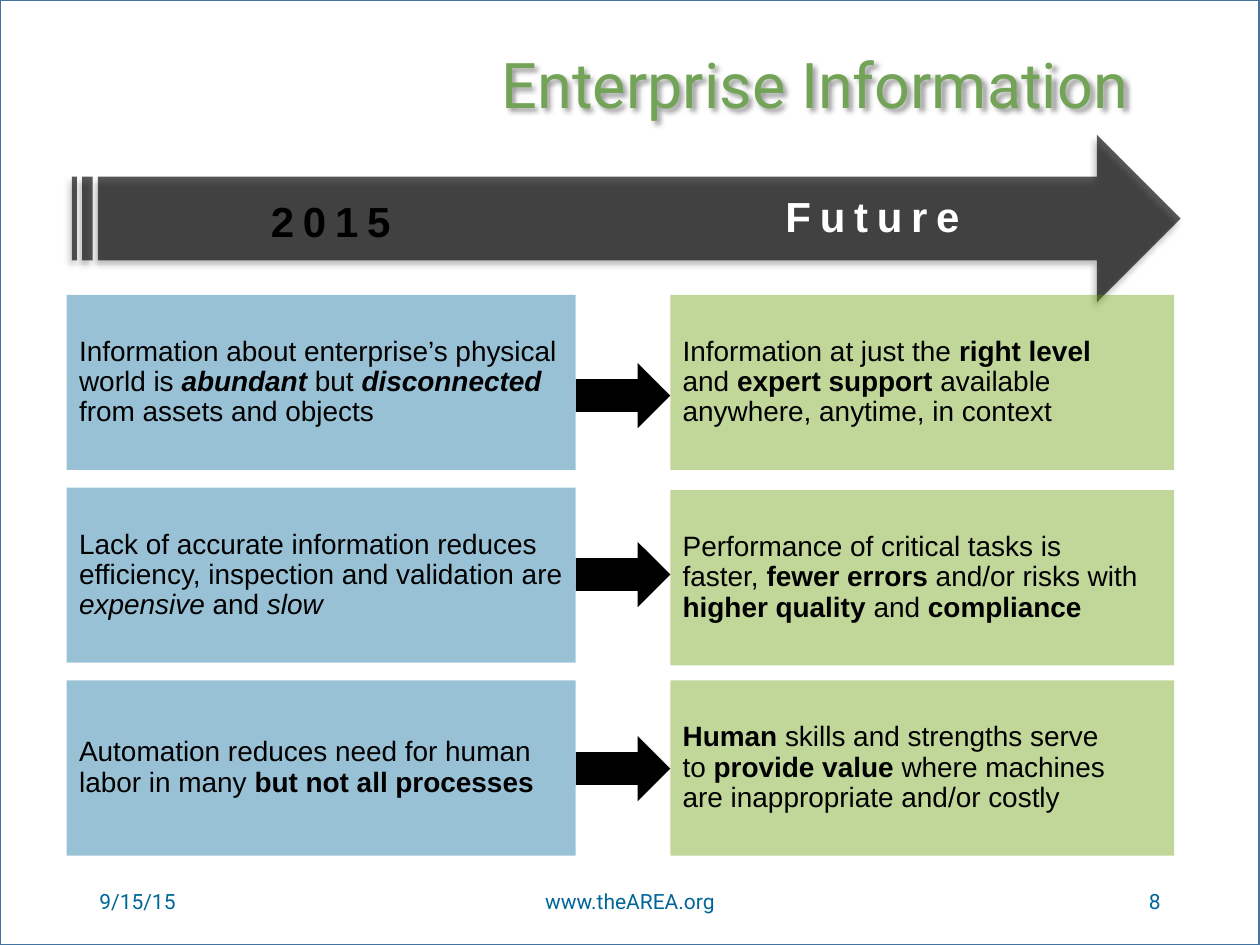
import copy
from dataclasses import dataclass

import pptx
import pptx.dml.color
import pptx.enum.shapes
import pptx.enum.text
import pptx.oxml
import pptx.oxml.ns
import pptx.util

SHAPE = pptx.enum.shapes.MSO_SHAPE
ALIGN = pptx.enum.text.PP_ALIGN
ANCHOR = pptx.enum.text.MSO_ANCHOR


@dataclass(frozen=True)
class Theme:
    heading_font: str = "Roboto"
    body_font: str = "Arial"
    title_size: int = 36
    period_size: int = 24
    body_size: int = 16
    footer_size: int = 12
    title: str = "72A356"
    frame: str = "43739E"
    today: str = "006699"
    future: str = "669900"
    dark: str = "000000"
    light: str = "FFFFFF"


THEME = Theme()

SLIDE_WIDTH, SLIDE_HEIGHT = 10, 7.5
TODAY_LEFT, TODAY_WIDTH = 0.53, 4.04
FUTURE_LEFT, FUTURE_WIDTH = 5.32, 4
FIRST_ROW, ROW_PITCH, ROW_HEIGHT = 2.34, 1.53, 1.39
STEP_HEIGHT = 0.52
FOOTER_TOP, FOOTER_HEIGHT = 6.95, 0.4

# Each passage is a list of (text, style); style letters: b bold, i italic.
# future_shift and step_drop are distances below the top of the row.
COMPARISONS = [
    dict(
        today=[("Information about enterprise’s physical world is ", ""), ("abundant", "bi"),
               (" but ", ""), ("disconnected ", "bi"), ("from assets and objects", "")],
        future=[("Information at just the ", ""), ("right level \n", "b"), ("and ", ""),
                ("expert support ", "b"), ("available anywhere, anytime, in context", "")],
        future_shift=0, step_drop=0.54),
    dict(
        today=[("Lack of accurate information reduces efficiency, inspection and "
                "validation are ", ""), ("expensive", "i"), (" and ", ""), ("slow", "i")],
        future=[("Performance of critical tasks is \nfaster, ", ""), ("fewer errors ", "b"),
                ("and/or risks with ", ""), ("higher quality ", "b"), ("and ", ""),
                ("compliance", "b")],
        future_shift=0.02, step_drop=0.43),
    dict(
        today=[("Automation reduces need for human labor in many ", ""),
               ("but not all processes", "b")],
        future=[("Human", "b"), (" skills and strengths serve \nto ", ""),
                ("provide value ", "b"),
                ("where machines \nare inappropriate and/or costly", "")],
        future_shift=0, step_drop=0.44),
]


def rgb(color):
    return pptx.dml.color.RGBColor.from_string(color)


def inches(*lengths):
    return [pptx.util.Inches(length) for length in lengths]


def write(shape, passage, *, size, color, font, align=ALIGN.LEFT, anchor=ANCHOR.MIDDLE,
          leading=1.0, tracking=0):
    """Fill a shape with one paragraph of (text, style) pieces."""
    frame = shape.text_frame
    frame.word_wrap = True
    frame.vertical_anchor = anchor
    paragraph = frame.paragraphs[0]
    paragraph.alignment = align
    paragraph.line_spacing = leading
    for text, style in passage:
        for index, line in enumerate(text.split("\n")):
            if index:
                paragraph.add_line_break()
                paragraph._p[-1].append(copy.deepcopy(run.font._element))
            if not line:
                continue
            run = paragraph.add_run()
            run.text = line
            run.font.name = font
            run.font.size = pptx.util.Pt(size)
            run.font.color.rgb = rgb(color)
            run.font.bold = "b" in style
            run.font.italic = "i" in style
            if tracking:
                run.font._element.set("spc", str(tracking * 100))


def add_label(slide, box, text, *, style="", **text_format):
    label = slide.shapes.add_textbox(*inches(*box))
    write(label, [(text, style)], **text_format)
    return label


def add_filled(slide, preset, box, color, opacity=100, outline=None):
    shape = slide.shapes.add_shape(preset, *inches(*box))
    shape.shadow.inherit = False
    shape.fill.solid()
    shape.fill.fore_color.rgb = rgb(color)
    if opacity < 100:
        solid = shape._element.spPr.find(pptx.oxml.ns.qn("a:solidFill"))
        alpha = pptx.oxml.parse_xml(
            f'<a:alpha {pptx.oxml.ns.nsdecls("a")} val="{opacity * 1000}"/>')
        solid[0].append(alpha)
    if outline:
        shape.line.color.rgb = rgb(outline)
        shape.line.width = pptx.util.Pt(1)
    else:
        shape.line.fill.background()
    return shape


def cast_shadow(shape, angle, blur, distance):
    shape.shadow.inherit = False
    effects = shape._element.spPr.find(pptx.oxml.ns.qn("a:effectLst"))
    effects.append(pptx.oxml.parse_xml(
        f'<a:outerShdw {pptx.oxml.ns.nsdecls("a")} blurRad="{pptx.util.Pt(blur)}" '
        f'dist="{pptx.util.Pt(distance)}" dir="{angle * 60000}" algn="tr" rotWithShape="0">'
        f'<a:srgbClr val="{THEME.dark}"><a:alpha val="40000"/></a:srgbClr></a:outerShdw>'))


def add_header(slide):
    add_filled(slide, SHAPE.RECTANGLE, (0, 0, SLIDE_WIDTH - 0.01, SLIDE_HEIGHT),
               THEME.light, 40, THEME.frame)
    title = add_label(slide, (2.94, 0.39, 7.06, 0.62), "Enterprise Information",
                      size=THEME.title_size, color=THEME.title, font=THEME.heading_font,
                      align=ALIGN.CENTER, leading=0.9)
    cast_shadow(title, angle=45, blur=3, distance=2)


def add_timeline(slide):
    timeline = add_filled(slide, SHAPE.STRIPED_RIGHT_ARROW, (0.57, 1.07, 8.8, 1.33),
                          THEME.dark, 65)
    cast_shadow(timeline, angle=135, blur=4, distance=3)
    for left, top, period, color in ((0.85, 1.5, "2015", THEME.dark),
                                     (5.15, 1.46, "Future", THEME.light)):
        add_label(slide, (left, top, 3.55, 0.5), period, style="b", size=THEME.period_size,
                  color=color, font=THEME.body_font, align=ALIGN.CENTER,
                  anchor=ANCHOR.TOP, tracking=5)


def add_panel(slide, box, color, passage):
    panel = add_filled(slide, SHAPE.RECTANGLE, box, color, 40)
    write(panel, passage, size=THEME.body_size, color=THEME.dark, font=THEME.body_font,
          leading=0.9)


def add_comparison(slide, top, comparison):
    """Add one row: today's panel, the step arrow and the future panel."""
    today_right = TODAY_LEFT + TODAY_WIDTH
    add_panel(slide, (TODAY_LEFT, top, TODAY_WIDTH, ROW_HEIGHT),
              THEME.today, comparison["today"])
    add_panel(slide, (FUTURE_LEFT, top + comparison["future_shift"], FUTURE_WIDTH, ROW_HEIGHT),
              THEME.future, comparison["future"])
    add_filled(slide, SHAPE.RIGHT_ARROW,
               (today_right, top + comparison["step_drop"], FUTURE_LEFT - today_right,
                STEP_HEIGHT), THEME.dark)


def add_footer(slide):
    for left, width, text, align in ((0.69, 2.25, "9/15/15", ALIGN.LEFT),
                                     (3.31, 3.38, "www.theAREA.org", ALIGN.CENTER),
                                     (7.06, 2.25, "8", ALIGN.RIGHT)):
        add_label(slide, (left, FOOTER_TOP, width, FOOTER_HEIGHT), text,
                  size=THEME.footer_size, color=THEME.today, font=THEME.heading_font,
                  align=align)


def main():
    deck = pptx.Presentation()
    deck.slide_width, deck.slide_height = inches(SLIDE_WIDTH, SLIDE_HEIGHT)
    slide = deck.slides.add_slide(deck.slide_layouts[6])
    add_header(slide)
    add_timeline(slide)
    for row, comparison in enumerate(COMPARISONS):
        add_comparison(slide, FIRST_ROW + row * ROW_PITCH, comparison)
    add_footer(slide)
    deck.save("out.pptx")


if __name__ == "__main__":
    main()
